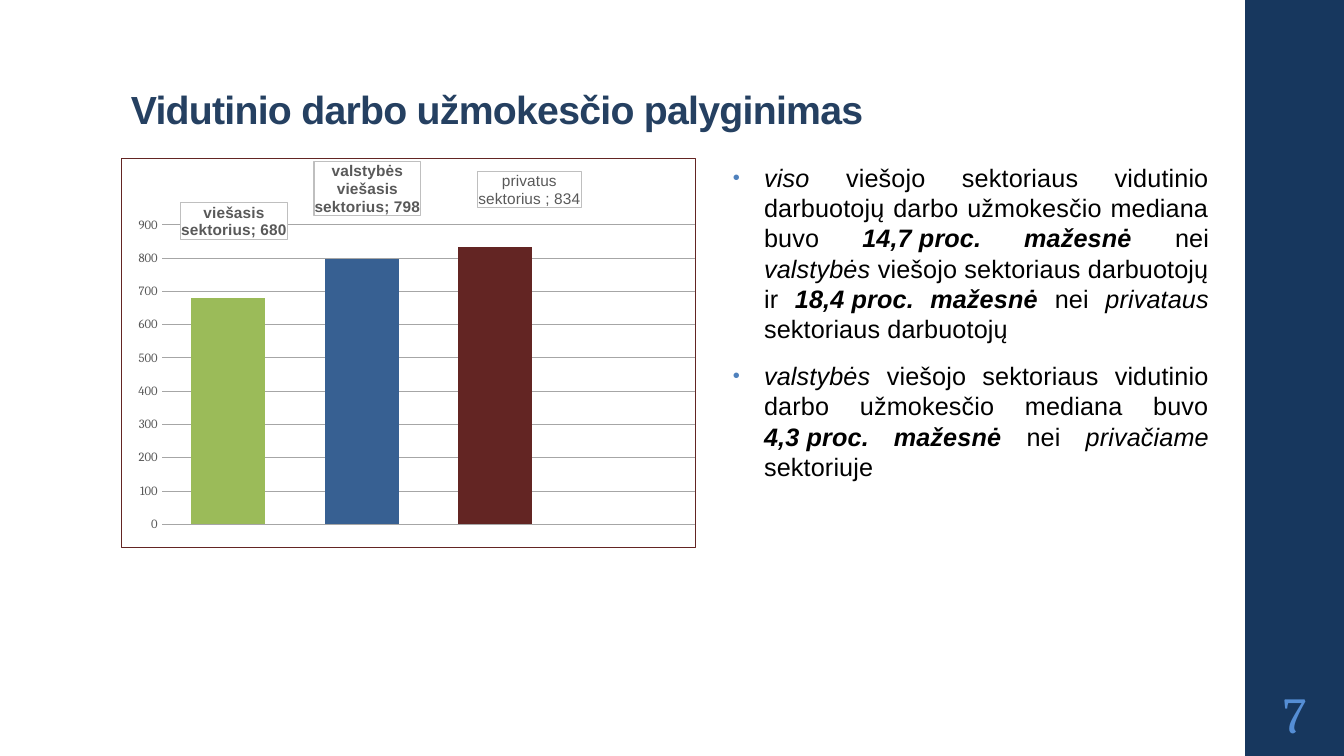
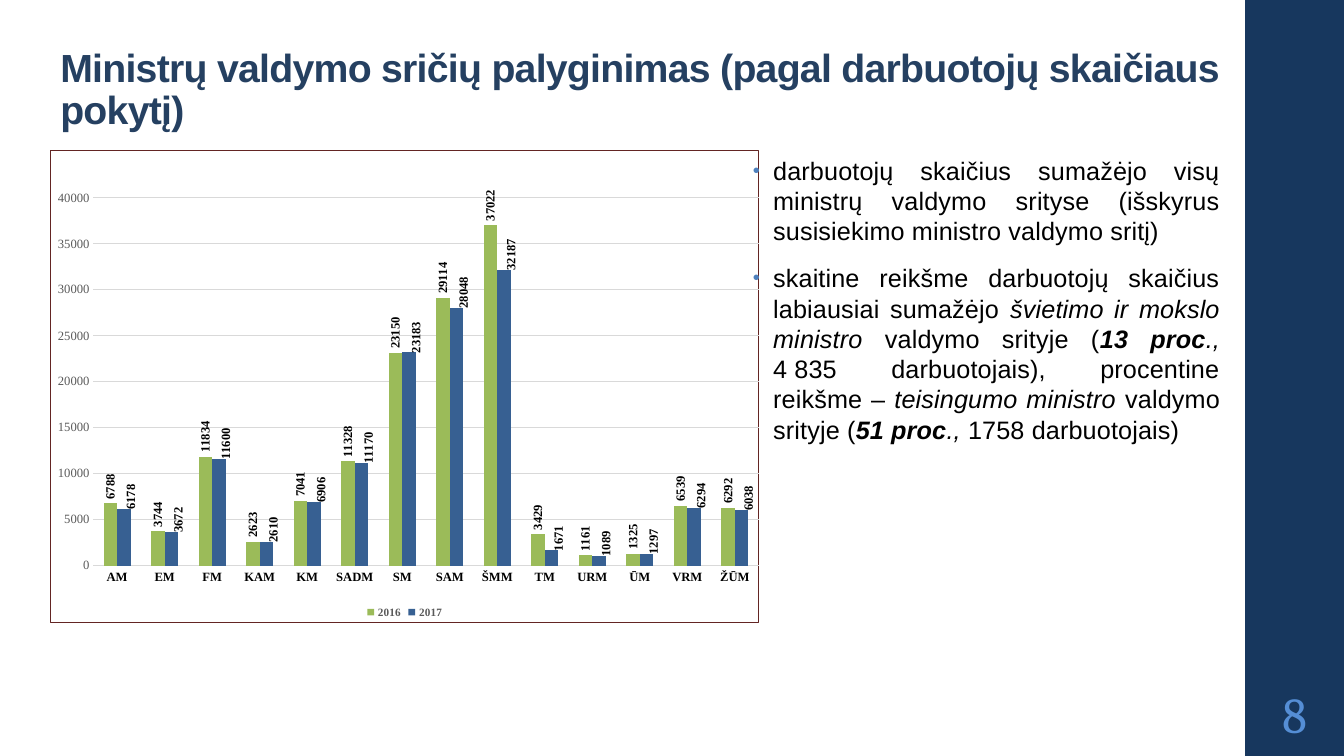
from dataclasses import dataclass

from pptx import Presentation
from pptx.chart.data import CategoryChartData
from pptx.dml.color import RGBColor
from pptx.enum.chart import XL_CHART_TYPE, XL_LABEL_POSITION, XL_LEGEND_POSITION, XL_TICK_MARK
from pptx.enum.shapes import MSO_SHAPE
from pptx.enum.text import MSO_ANCHOR, PP_ALIGN
from pptx.oxml import parse_xml
from pptx.oxml.ns import nsdecls, qn
from pptx.util import Inches, Pt


@dataclass(frozen=True)
class Theme:
    navy: str = "17375E"
    title: str = "254061"
    number: str = "558ED5"
    bullet: str = "4F81BD"
    ink: str = "000000"
    gray: str = "595959"
    green: str = "9BBB59"
    blue: str = "376092"
    maroon: str = "632523"
    white: str = "FFFFFF"
    label_line: str = "BFBFBF"
    sans: str = "Arial"
    serif: str = "Cambria"
    roman: str = "Times New Roman"
    title_size: int = 28
    body_size: int = 18
    number_size: int = 36
    label_size: int = 11
    chart_size: int = 10
    axis_size: int = 9
    legend_size: int = 8


theme = Theme()


def style_font(font, name, size, color, bold=False):
    font.name, font.size, font.bold = name, Pt(size), bold
    font.color.rgb = RGBColor.from_string(color)


def manual_layout(**settings):
    """Chart layout element; settings follow the schema order."""
    parts = "".join(f'<c:{tag} val="{value}"/>' for tag, value in settings.items())
    return parse_xml(f'<c:layout {nsdecls("c")}><c:manualLayout>{parts}</c:manualLayout></c:layout>')


BOX_XML = (
    f'<c:spPr {nsdecls("c", "a")}><a:solidFill><a:srgbClr val="{theme.white}"/></a:solidFill>'
    '<a:ln w="9525"><a:solidFill><a:srgbClr val="{line}"/></a:solidFill></a:ln></c:spPr>'
)
NO_BREAK_SPACE = chr(160)

# Body paragraphs are lists of (text, style): i is italic, b is bold, ~ is a no-break space
slides = [
    dict(
        number=7,
        title="Vidutinio darbo užmokesčio palyginimas",
        title_at=(1.2, 0.31, 11, 1.06),
        chart_at=(1.2, 1.57, 5.7, 3.87),
        plot=(0.07, 0.17, 0.93, 0.77),
        gap=80, top=900, step=100, grid="A6A6A6", axis_font=theme.serif,
        # The blank category keeps the free slot at the right
        categories=["viešasis sektorius", "valstybės viešasis sektorius", "privatus sektorius ", ""],
        series={"Series 1": (680, 798, 834, None)},
        body_at=(7.17, 1.56, 4.92, 5.19),
        indent=0.31,
        body=[
            [("viso", "i"),
             (" viešojo sektoriaus vidutinio darbuotojų darbo užmokesčio mediana buvo ", ""),
             ("14,7~proc. mažesnė ", "bi"), ("nei ", ""), ("valstybės", "i"),
             (" viešojo sektoriaus darbuotojų ir ", ""), ("18,4~proc. mažesnė ", "bi"),
             ("nei ", ""), ("privataus", "i"), (" sektoriaus darbuotojų", "")],
            [("valstybės", "i"), (" viešojo sektoriaus vidutinio darbo užmokesčio mediana buvo ", ""),
             ("4,3~proc. mažesnė", "bi"), (" nei ", ""), ("privačiame ", "i"), ("sektoriuje", "")],
        ],
    ),
    dict(
        number=8,
        title="Ministrų valdymo sričių palyginimas (pagal darbuotojų skaičiaus pokytį)",
        title_at=(0.5, 0.31, 11.7, 1.06),
        chart_at=(0.5, 1.49, 7.03, 4.69),
        plot=(0.06, 0.1, 0.94, 0.78),
        gap=150, top=40000, step=5000, grid="D9D9D9", axis_font=theme.roman,
        categories=["AM", "EM", "FM", "KAM", "KM", "SADM", "SM", "SAM",
                    "ŠMM", "TM", "URM", "ŪM", "VRM", "ŽŪM"],
        series={
            "2016": (6788, 3744, 11834, 2623, 7041, 11328, 23150,
                     29114, 37022, 3429, 1161, 1325, 6539, 6292),
            "2017": (6178, 3672, 11600, 2610, 6906, 11170, 23183,
                     28048, 32187, 1671, 1089, 1297, 6294, 6038),
        },
        body_at=(7.37, 1.49, 4.83, 4.93),
        indent=0.2,
        body=[
            [("darbuotojų skaičius sumažėjo visų ministrų valdymo srityse "
              "(išskyrus susisiekimo ministro valdymo sritį)", "")],
            [("skaitine reikšme darbuotojų skaičius labiausiai sumažėjo ", ""),
             ("švietimo ir mokslo ministro ", "i"), ("valdymo srityje (", ""),
             ("13 proc", "bi"), ("., ", "i"), ("4~835 darbuotojais), procentine reikšme – ", ""),
             ("teisingumo ministro ", "i"), ("valdymo srityje (", ""),
             ("51~proc", "bi"), ("., ", "i"), ("1758 darbuotojais)", "")],
        ],
    ),
]

deck = Presentation()
deck.slide_width, deck.slide_height = Inches(13.33), Inches(7.5)
charts = []

for content in slides:
    page = deck.slides.add_slide(deck.slide_layouts[6])

    band = page.shapes.add_shape(
        MSO_SHAPE.RECTANGLE, Inches(12.35), Inches(0), Inches(0.98), deck.slide_height)
    band.shadow.inherit = False
    band.fill.solid()
    band.fill.fore_color.rgb = RGBColor.from_string(theme.navy)
    band.line.fill.background()

    title = page.shapes.add_textbox(*map(Inches, content["title_at"])).text_frame
    title.word_wrap = True
    title.vertical_anchor = MSO_ANCHOR.BOTTOM
    para = title.paragraphs[0]
    para.text = content["title"]
    para.line_spacing = 0.9
    style_font(para.font, theme.sans, theme.title_size, theme.title, bold=True)
    para.font._element.set("spc", "-50")

    data = CategoryChartData()
    data.categories = content["categories"]
    for name, values in content["series"].items():
        data.add_series(name, values)
    chart = page.shapes.add_chart(
        XL_CHART_TYPE.COLUMN_CLUSTERED, *map(Inches, content["chart_at"]), data).chart
    charts.append(chart)
    chart.has_title = chart.has_legend = False
    style_font(chart.font, theme.serif, theme.chart_size, theme.ink)
    frame = chart.element.find(qn("c:chart"))
    frame.addnext(parse_xml(BOX_XML.format(line=theme.maroon)))
    plot_area = frame.find(qn("c:plotArea"))
    for layout in plot_area.findall(qn("c:layout")):
        plot_area.remove(layout)
    plot_area.insert(0, manual_layout(
        layoutTarget="inner", xMode="edge", yMode="edge", **dict(zip("xywh", content["plot"]))))

    plot = chart.plots[0]
    plot.vary_by_categories = False
    plot.gap_width, plot.overlap = content["gap"], 0
    for series, color in zip(plot.series, (theme.green, theme.blue)):
        series.format.fill.solid()
        series.format.fill.fore_color.rgb = RGBColor.from_string(color)

    for axis in (chart.value_axis, chart.category_axis):
        axis.major_tick_mark = axis.minor_tick_mark = XL_TICK_MARK.NONE
        axis.format.line.fill.background()
    scale = chart.value_axis
    scale.minimum_scale, scale.maximum_scale = 0, content["top"]
    scale.major_unit = content["step"]
    scale.tick_labels.number_format = "0"
    scale.tick_labels.number_format_is_linked = False
    style_font(scale.tick_labels.font, content["axis_font"], theme.axis_size, theme.gray)
    grid_line = scale.major_gridlines.format.line
    grid_line.width = Pt(0.75)
    grid_line.color.rgb = RGBColor.from_string(content["grid"])

    body = page.shapes.add_textbox(*map(Inches, content["body_at"])).text_frame
    body.word_wrap = True
    for index, spans in enumerate(content["body"]):
        para = body.add_paragraph() if index else body.paragraphs[0]
        para.alignment = PP_ALIGN.JUSTIFY
        para.space_before = para.space_after = Pt(6)
        properties = para._p.get_or_add_pPr()
        properties.set("marL", str(Inches(content["indent"])))
        properties.set("indent", str(-Inches(content["indent"])))
        for bullet_xml in (
            f'<a:buClr {nsdecls("a")}><a:srgbClr val="{theme.bullet}"/></a:buClr>',
            f'<a:buSzPct {nsdecls("a")} val="80000"/>',
            f'<a:buFont {nsdecls("a")} typeface="{theme.sans}"/>',
            f'<a:buChar {nsdecls("a")} char="•"/>',
        ):
            properties.append(parse_xml(bullet_xml))
        style_font(para.font, theme.sans, theme.body_size, theme.ink)
        para.font._element.set("spc", "10")
        for text, style in spans:
            span = para.add_run()
            span.text = text.replace("~", NO_BREAK_SPACE)
            if style:
                span.font.bold, span.font.italic = "b" in style, "i" in style

    number = page.shapes.add_textbox(Inches(12.35), Inches(6.75), Inches(0.98), Inches(0.65)).text_frame
    number.word_wrap = True
    number.vertical_anchor = MSO_ANCHOR.MIDDLE
    number.margin_left = number.margin_right = Inches(0.05)
    para = number.paragraphs[0]
    para.text = str(content["number"])
    para.alignment = PP_ALIGN.CENTER
    style_font(para.font, theme.serif, theme.number_size, theme.number)

wage_chart, staff_chart = charts

# Wages: one colour a bar, boxed labels with category and value
wage_chart.category_axis.visible = False
wages = wage_chart.plots[0].series[0]
wage_bars = [  # colour, bold label, label shift
    (theme.green, True, (0.01, -0.14)),
    (theme.blue, True, (0.01, -0.1)),
    (theme.maroon, False, (0.06, -0.09)),
]
style_font(wages.data_labels.font, theme.sans, theme.label_size, theme.gray, bold=True)
wages.data_labels.position = XL_LABEL_POSITION.OUTSIDE_END
wages.data_labels.show_value = True
for index, (color, bold, shift) in enumerate(wage_bars):
    point = wages.points[index]
    point.format.fill.solid()
    point.format.fill.fore_color.rgb = RGBColor.from_string(color)
    style_font(point.data_label.font, theme.sans, theme.label_size, theme.gray, bold)
    point.data_label.position = XL_LABEL_POSITION.OUTSIDE_END
for label, (color, bold, shift) in zip(wage_chart.element.xpath("//c:dLbl"), wage_bars):
    label.find(qn("c:idx")).addnext(manual_layout(x=shift[0], y=shift[1]))
for label in wage_chart.element.xpath("//c:dLbl | //c:dLbls[c:txPr]"):
    for plain_box in label.findall(qn("c:spPr")):
        label.remove(plain_box)
    text_style = label.find(qn("c:txPr"))
    text_style.addprevious(parse_xml(BOX_XML.format(line=theme.label_line)))
    text_style.find(qn("a:bodyPr")).set("wrap", "square")
    label.find(qn("c:showCatName")).set("val", "1")
    label.find(qn("c:showBubbleSize")).addnext(
        parse_xml(f'<c:separator {nsdecls("c")}>; </c:separator>'))

# Staff: upright value labels, the second year's nudged to the right
style_font(staff_chart.category_axis.tick_labels.font, theme.roman, theme.axis_size, theme.ink, bold=True)
staff_chart.has_legend = True
staff_chart.legend.position = XL_LEGEND_POSITION.BOTTOM
staff_chart.legend.include_in_layout = False
style_font(staff_chart.legend.font, theme.roman, theme.legend_size, theme.gray, bold=True)
first_year, second_year = staff_chart.plots[0].series
year_labels = [first_year.data_labels, second_year.data_labels]
for labels in year_labels:
    labels.show_value = True
point_labels = [second_year.points[index].data_label for index in range(len(slides[1]["categories"]))]
for labels in year_labels + point_labels:
    style_font(labels.font, theme.roman, theme.axis_size, theme.ink, bold=True)
    labels.position = XL_LABEL_POSITION.OUTSIDE_END
for label in staff_chart.element.xpath("//c:dLbl"):
    label.find(qn("c:idx")).addnext(manual_layout(x=0.01, y=0.01))
for text_body in staff_chart.element.xpath("//c:dLbls//a:bodyPr"):
    text_body.set("rot", "-5400000")
    text_body.set("vert", "horz")

# Moved labels carry no leader lines
for chart in charts:
    for leader_lines in chart.element.xpath("//c:showLeaderLines"):
        leader_lines.set("val", "0")

deck.save("out.pptx")
